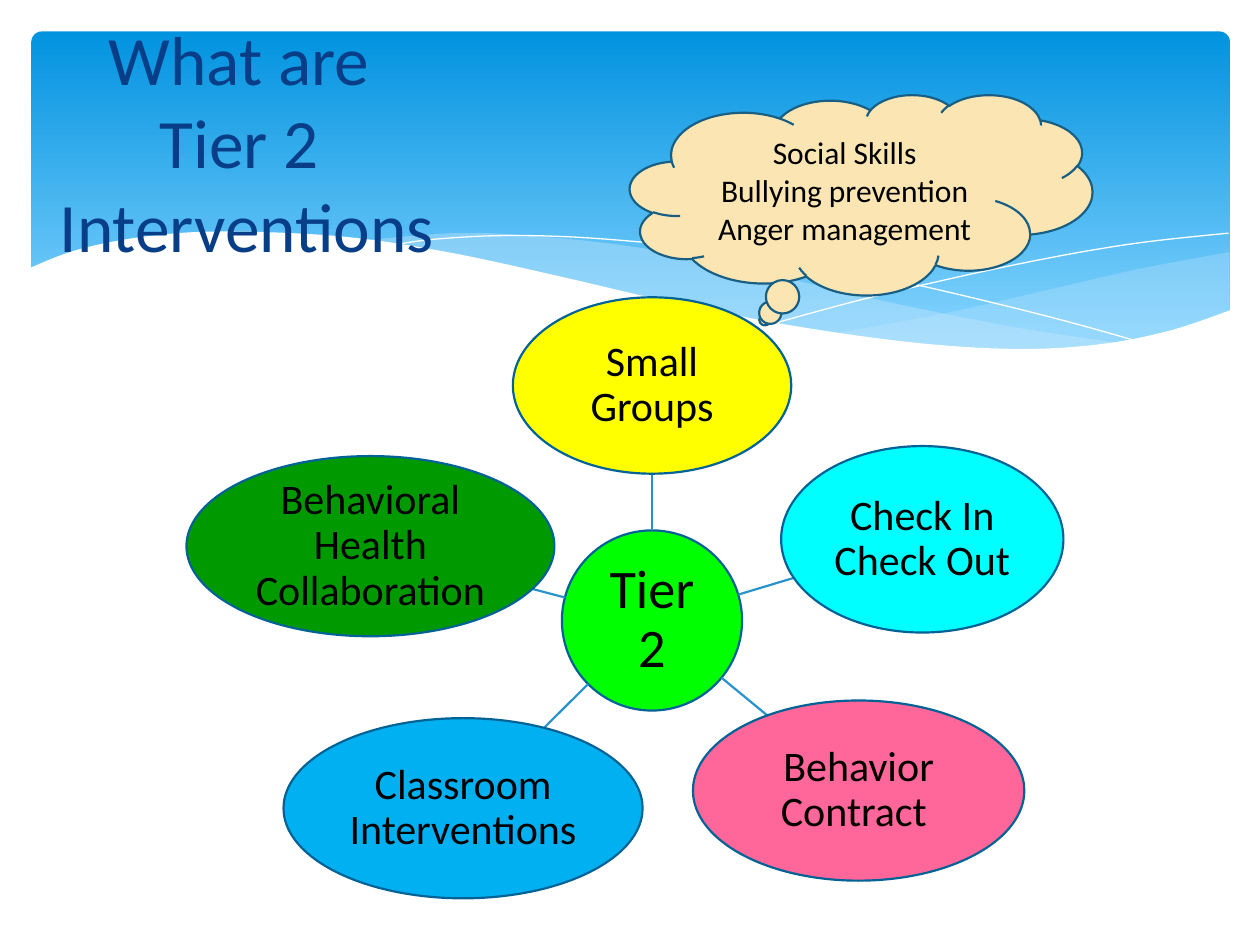
from math import hypot

from lxml import etree
from pptx import Presentation
from pptx.dml.color import RGBColor
from pptx.enum.shapes import MSO_CONNECTOR, MSO_SHAPE
from pptx.enum.text import MSO_ANCHOR, PP_ALIGN
from pptx.oxml.ns import qn
from pptx.util import Inches, Pt

OVAL = MSO_SHAPE.OVAL
CLOUD = MSO_SHAPE.CLOUD_CALLOUT
ROUND = MSO_SHAPE.ROUNDED_RECTANGLE
STRAIGHT = MSO_CONNECTOR.STRAIGHT
CENTER = PP_ALIGN.CENTER
MIDDLE = MSO_ANCHOR.MIDDLE

COLS, ROWS = 100, 75  # slide grid, one cell is 0.1 inch


def unit(n):
    return Inches(n / 10)


def color(code):
    return RGBColor.from_string(code)


def write(frame, text, size=24, ink="000000", font="Calibri", gap=None, inset=None):
    """Fill a text frame; each line feed starts a paragraph, each \\v a line."""
    frame.word_wrap = True
    frame.vertical_anchor = MIDDLE
    if inset is not None:
        frame.margin_left = frame.margin_right = Inches(inset)
        frame.margin_top = frame.margin_bottom = Inches(inset)
    frame.text = text
    for para in frame.paragraphs:
        para.alignment = CENTER
        if gap:
            para.line_spacing = gap
        for run in para.runs:
            run.font.size = Pt(size)
            run.font.name = font
            run.font.color.rgb = color(ink)


def smooth(knots, steps=6):
    """Points of a Catmull-Rom curve through the knots."""
    ends = [knots[0], *knots, knots[-1]]
    curve = []
    for a, b, c, d in zip(ends, ends[1:], ends[2:], ends[3:]):
        for i in range(steps):
            t = i / steps
            curve.append(tuple(
                q + t / 2 * (r - p + t * (2 * p - 5 * q + 4 * r - s
                                          + t * (3 * (q - r) + s - p)))
                for p, q, r, s in zip(a, b, c, d)))
    return curve + [knots[-1]]


class Board:
    edge, link, width = "016296", "2792CB", 1.25

    def __init__(self, slide):
        self.shapes = slide.shapes

    def paint(self, shape, fill=None, line=None, width=width, alpha=None):
        shape.shadow.inherit = False
        if fill:
            shape.fill.solid()
            shape.fill.fore_color.rgb = color(fill)
        else:
            shape.fill.background()
        if alpha:
            tone = shape.element.spPr.find(qn("a:solidFill"))[0]
            etree.SubElement(tone, qn("a:alpha")).set("val", str(alpha * 1000))
        if line:
            shape.line.color.rgb = color(line)
            shape.line.width = Pt(width)
        else:
            shape.line.fill.background()

    def shape(self, kind, at, fill, line=None):
        item = self.shapes.add_shape(kind, *map(unit, at))
        self.paint(item, fill, line)
        return item

    def panel(self, at, top, base):
        item = self.shape(ROUND, at, top)
        item.adjustments[0] = 0.03
        item.fill.gradient()
        item.fill.gradient_angle = 270
        for stop, code, place in zip(item.fill.gradient_stops, (top, base), (0, 0.9)):
            stop.color.rgb = color(code)
            stop.position = place

    def wave(self, points, close=True, **look):
        dots = [(unit(x), unit(y)) for x, y in points]
        path = self.shapes.build_freeform(*dots[0])
        path.add_line_segments(dots[1:], close=close)
        self.paint(path.convert_to_shape(), **look)

    def text(self, at, text, **style):
        write(self.shapes.add_textbox(*map(unit, at)).text_frame, text, **style)

    def bubble(self, at, fill, text, size=24):
        item = self.shape(OVAL, at, fill, self.edge)
        write(item.text_frame, text, size=size, gap=0.9, inset=0.03)

    def spoke(self, hub, node):
        """Line between the rims of two ovals, aimed at their centres."""
        (ax, ay), (bx, by) = ((x + w / 2, y + h / 2) for x, y, w, h in (hub, node))
        dx, dy = bx - ax, by - ay
        s, e = (1 / hypot(2 * dx / w, 2 * dy / h) for _, _, w, h in (hub, node))
        ends = ax + s * dx, ay + s * dy, bx - e * dx, by - e * dy
        line = self.shapes.add_connector(STRAIGHT, *map(unit, ends))
        line.line.color.rgb = color(self.link)
        line.line.width = Pt(self.width)
        etree.SubElement(line.element.spPr, qn("a:effectLst"))


def main():
    deck = Presentation()
    deck.slide_width, deck.slide_height = unit(COLS), unit(ROWS)
    board = Board(deck.slides.add_slide(deck.slide_layouts[6]))

    # Blue header with translucent waves
    board.panel((2.5, 2.5, 95.1, 27), "0293E0", "83D3FE")
    right = (smooth([(97.6, 20), (90.6, 21.3), (83.2, 23), (75.3, 24.8), (66.1, 26.5)])
             + smooth([(66.1, 26.5), (73.2, 27.4), (80.3, 27.8), (87.2, 27.4),
                       (93.5, 26.2), (97.6, 24.7)]))
    board.wave(right, fill="C6E7FC", alpha=29)
    middle = (smooth([(89.3, 27.3), (80.7, 26), (70.6, 24), (62.9, 22.2), (55.5, 20.5),
                      (48.9, 19.4), (42, 18.7), (36.1, 18.5), (28.6, 19.1)])
              + smooth([(28.6, 19.1), (36.2, 20.3), (44.9, 22.2), (56.6, 24.8),
                        (65, 26.4), (73.6, 27.5), (80.7, 27.8), (89.3, 27.3)]))
    board.wave(middle, fill="C6E7FC", alpha=40)

    # Fine white lines
    falling = [(30.9, 19.5), (34.4, 19), (40.1, 18.7), (46.9, 18.9), (55.6, 19.7),
               (63.6, 20.8), (72.7, 22.6), (83.1, 25.1), (90.7, 27.2)]
    rising = [(61.3, 25.7), (69.5, 23.5), (80.6, 21), (89.5, 19.4), (97.5, 18.5)]
    for knots in (falling, rising):
        board.wave(smooth(knots), close=False, line="FFFFFF", width=0)

    # White wave that cuts off the header
    cut = smooth([(97.7, 24.6), (93, 26.2), (87.5, 27.3), (80.9, 27.7), (72.6, 27.2),
                  (62.6, 25.8), (52.9, 23.9), (44.7, 22), (36.5, 20.2), (29.2, 19),
                  (23, 18.5), (16.1, 18.4), (10.6, 18.9), (5.9, 19.9), (2.3, 21.3)])
    board.wave(cut + [(2.3, 32.9), (97.7, 32.9)], fill="FFFFFF")

    # Hub with its five interventions
    hub = (44.6, 42.1, 14.3, 14.3)
    board.bubble(hub, "00FF00", "Tier 2", size=31)
    nodes = [
        ((40.7, 23.6, 22.1, 14), "FFFF00", "Small Groups"),
        ((62, 35.4, 22.4, 14.8), "00FFFF", "Check In Check Out"),
        ((55, 55.6, 26.3, 14.3), "FF6699", "Behavior Contract "),
        ((22.5, 57, 28.5, 14.3), "00B0F0", "Classroom Interventions"),
        ((14.8, 36.2, 29.2, 14.3), "009900", "Behavioral Health Collaboration"),
    ]
    for at, fill, text in nodes:
        board.spoke(hub, at)
        board.bubble(at, fill, text)

    # Title and thought cloud
    board.text((2.5, 0.6, 34.2, 21.2), "What are \vTier 2 \vInterventions",
               size=39.6, ink="073E87")
    cloud = board.shape(CLOUD, (50, 7.5, 36.7, 15.9), "FBE6B3", "195F84")
    write(cloud.text_frame, "Social Skills\nBullying prevention\nAnger management", size=18)

    deck.save("out.pptx")


if __name__ == "__main__":
    main()
